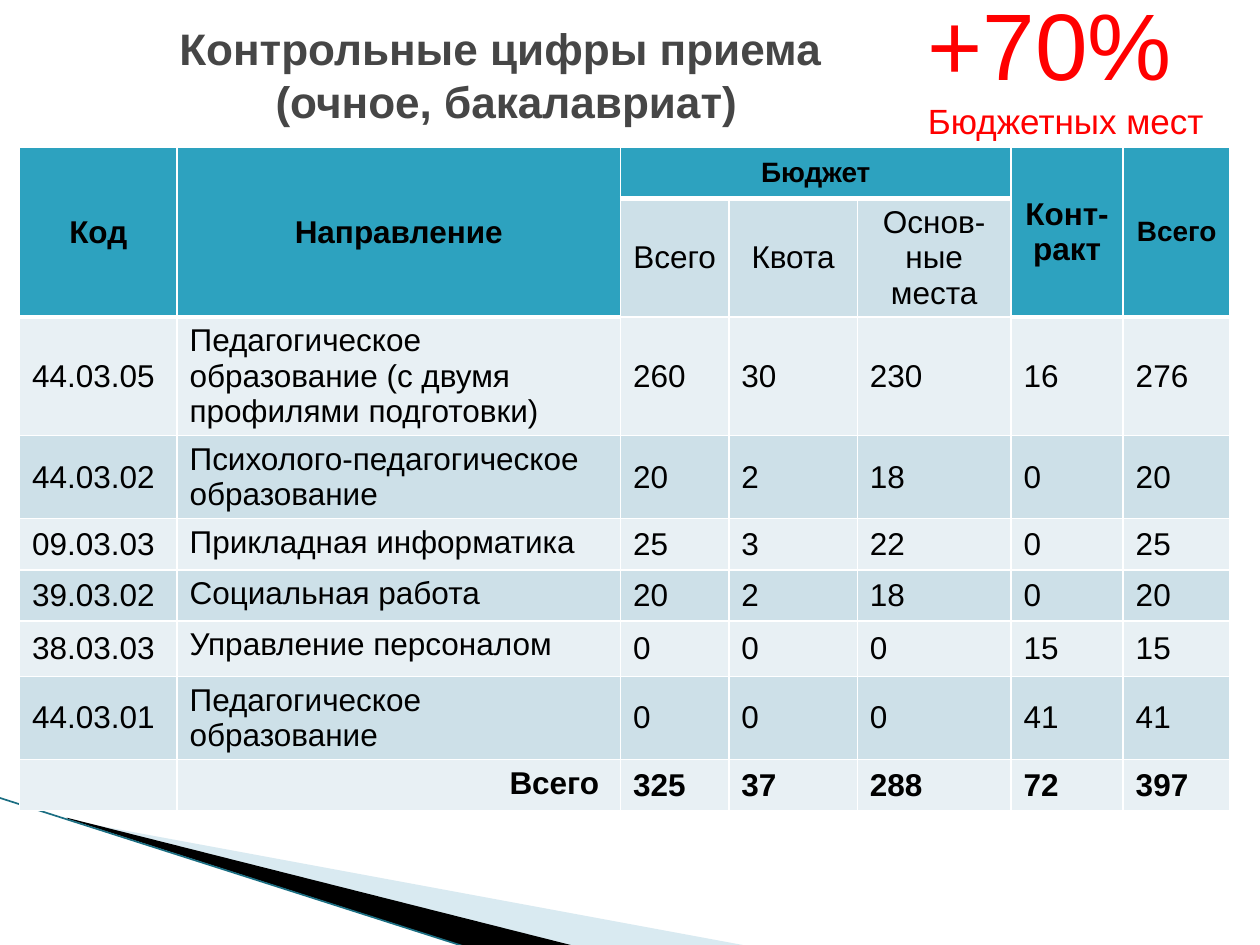
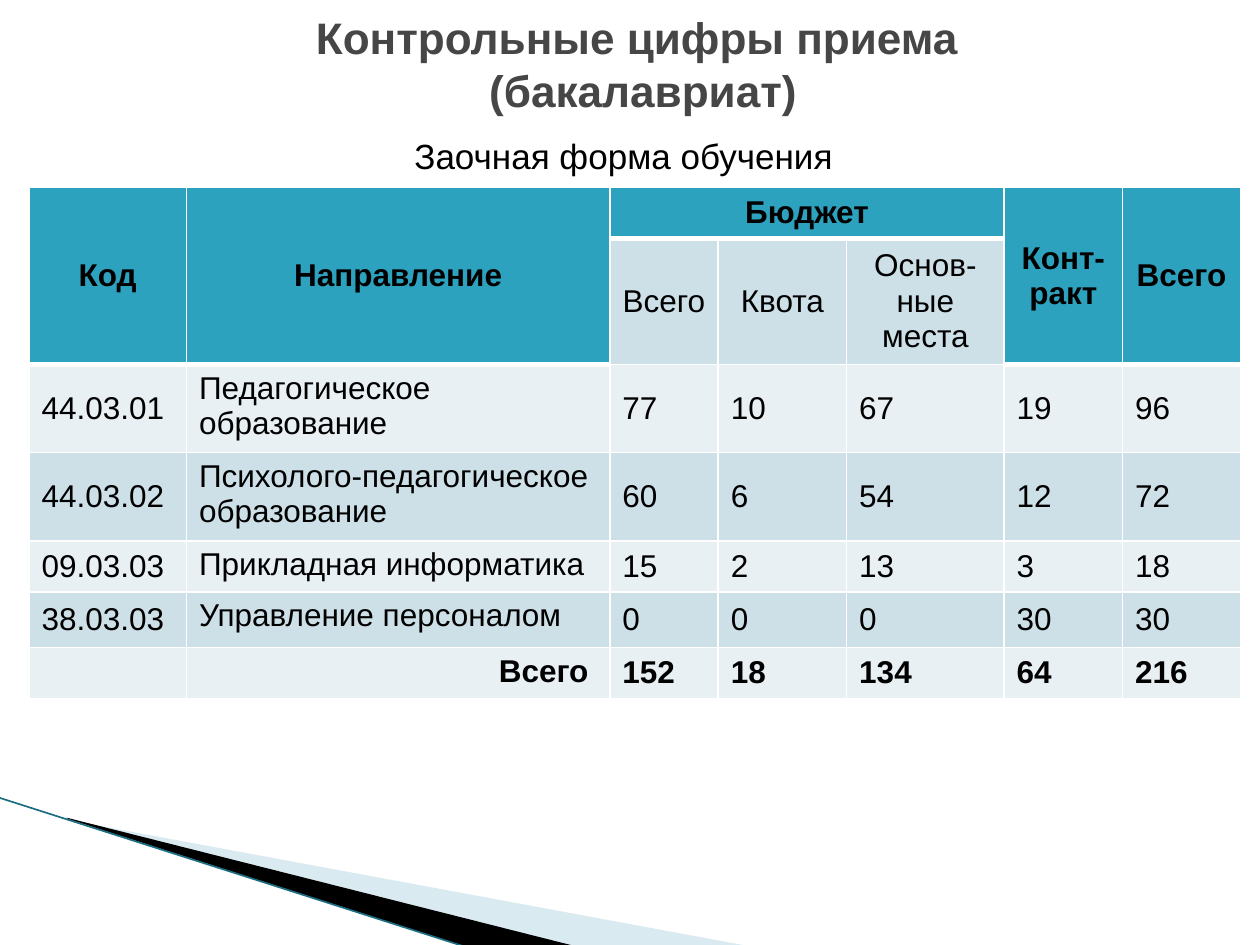
from lxml.etree import SubElement
from pptx import Presentation
from pptx.dml.color import RGBColor
from pptx.enum.shapes import MSO_CONNECTOR
from pptx.enum.text import MSO_ANCHOR as ANCHOR, MSO_AUTO_SIZE as AUTO, PP_ALIGN as ALIGN
from pptx.oxml.ns import qn
from pptx.util import Inches, Pt

COLORS = {
    "title": "464646", "text": "000000", "accent": "FF0000",
    "head": "2DA2BF", "dark_band": "CDE0E8", "light_band": "E8F0F4",
    "rule": "FFFFFF", "wedge": "A0CBDC", "wedge_edge": "000000", "swoosh": "1B6E82",
}
FONT = "Arial"
COLS, ROWS = 100, 75
CELL = Inches(10) // COLS
BUDGET = range(2, 5)
HEAD = ["Код", "Направление", "Бюджет", "", "", "Конт-ракт", "Всего"]
SUBHEAD = ["", "", "Всего", "Квота", "Основ-ные места", "", ""]
ROW, TALL_ROW = 4.06, 4.4

FULL_TIME = [
    ["44.03.05", "Педагогическое образование (с двумя профилями подготовки)", 260, 30, 230, 16, 276],
    ["44.03.02", "Психолого-педагогическое образование", 20, 2, 18, 0, 20],
    ["09.03.03", "Прикладная информатика", 25, 3, 22, 0, 25],
    ["39.03.02", "Социальная работа", 20, 2, 18, 0, 20],
    ["38.03.03", "Управление персоналом", 0, 0, 0, 15, 15],
    ["44.03.01", "Педагогическое образование", 0, 0, 0, 41, 41],
]
PART_TIME = [
    ["44.03.01", "Педагогическое образование", 77, 10, 67, 19, 96],
    ["44.03.02", "Психолого-педагогическое образование", 60, 6, 54, 12, 72],
    ["09.03.03", "Прикладная информатика", 15, 2, 13, 3, 18],
    ["38.03.03", "Управление персоналом", 0, 0, 0, 30, 30],
]


def grid(*cells):
    return [int(n * CELL) for n in cells]


def rgb(name):
    return RGBColor.from_string(COLORS[name])


def place(sp, box):
    sp.left, sp.top, sp.width, sp.height = grid(*box)


def add_run(p, text, size, color="text", bold=False):
    r = p.add_run()
    r.text = text
    r.font.name, r.font.size, r.font.bold = FONT, Pt(size), bold
    r.font.color.rgb = rgb(color)


def reframe(sp, box):
    old_left, old_top = sp.left, sp.top
    place(sp, box)
    outline = next(sp._element.iter(qn("a:pathLst")))[0]
    outline.set("w", str(sp.width))
    outline.set("h", str(sp.height))
    for pt in outline.iter(qn("a:pt")):
        pt.set("x", str(int(pt.get("x")) + old_left - sp.left))
        pt.set("y", str(int(pt.get("y")) + old_top - sp.top))


def add_wedge(slide, box, points, color, alpha=None):
    start, *rest = [grid(*pt) for pt in points]
    builder = slide.shapes.build_freeform(*start)
    builder.add_line_segments(rest, close=True)
    sp = builder.convert_to_shape()
    reframe(sp, box)
    sp.shadow.inherit = False
    sp.line.fill.background()
    sp.fill.solid()
    sp.fill.fore_color.rgb = rgb(color)
    if alpha:
        clr = sp.fill._xPr.find(".//" + qn("a:srgbClr"))
        SubElement(clr, qn("a:alpha"), val=str(alpha * 1000))


def add_corner(slide):
    add_wedge(slide, (7.8, 54.7, 41.6, 15.8),
              [(5.5, 65.1), (59.5, 75.1), (45.6, 75.1), (5.5, 65)], "wedge", 40)
    add_wedge(slide, (-0.6, 63.3, 41.6, 9.2),
              [(5.3, 64.9), (45.7, 75.1), (37.2, 75.2), (5.4, 65)], "wedge_edge")
    line = slide.shapes.add_connector(MSO_CONNECTOR.STRAIGHT, *grid(-0.1, 63.3, 37.1, 75.2))
    line.line.color.rgb = rgb("swoosh")
    line.line.width = Pt(0.95)
    SubElement(line._element.spPr, qn("a:effectLst"))


def add_slide(prs, title_lines, box):
    slide = prs.slides.add_slide(prs.slide_layouts[5])
    add_corner(slide)
    title = slide.shapes.title
    place(title, box)
    tf = title.text_frame
    tf.word_wrap, tf.auto_size, tf.vertical_anchor = True, AUTO.NONE, ANCHOR.MIDDLE
    p = tf.paragraphs[0]
    p.alignment = ALIGN.CENTER
    for i, text in enumerate(title_lines):
        if i:
            p.add_line_break()
        add_run(p, text, 25.2, "title", True)
    return slide


def add_text(slide, box, lines, color="text", align=ALIGN.LEFT):
    tf = slide.shapes.add_textbox(*grid(*box)).text_frame
    tf.word_wrap = True
    for i, (text, size) in enumerate(lines):
        p = tf.add_paragraph() if i else tf.paragraphs[0]
        p.alignment = align
        add_run(p, text, size, color)


def is_head(r, c):
    return r == 0 or (r == 1 and c not in BUDGET)


def set_borders(cell, top, bottom):
    tc_pr = cell._tc.get_or_add_tcPr()
    for side, width in (("L", 1), ("R", 1), ("T", top), ("B", bottom)):
        ln = SubElement(tc_pr, qn("a:ln" + side), w=str(Pt(width)))
        fill = SubElement(ln, qn("a:solidFill"))
        SubElement(fill, qn("a:srgbClr"), val=COLORS["rule"])


def fill_cell(cell, r, c, text, size, is_total):
    head = is_head(r, c)
    below_head = r > 0 and not head and is_head(r - 1, c)
    set_borders(cell, 3 if below_head else 1, 3 if head else 1)
    cell.fill.solid()
    cell.fill.fore_color.rgb = rgb("head" if head else "dark_band" if r % 2 else "light_band")
    is_name = r > 1 and c == 1
    cell.vertical_anchor = ANCHOR.TOP if is_name else ANCHOR.MIDDLE
    p = cell.text_frame.paragraphs[0]
    if r < 2:
        p.alignment = ALIGN.CENTER
    elif is_name and is_total:
        p.alignment = ALIGN.RIGHT
    if text != "":
        add_run(p, str(text), size, bold=head or is_total)


def add_admission_table(slide, box, widths, programmes, small_heads=()):
    totals = [sum(col) for col in list(zip(*programmes))[2:]]
    rows = [HEAD, SUBHEAD, *programmes, ["", "Всего ", *totals]]
    frame = slide.shapes.add_table(len(rows), len(HEAD), *grid(*box))
    table = frame.table
    for col, width in zip(table.columns, widths):
        col.width = grid(width)[0]
    for row, values in zip(table.rows, rows):
        row.height = grid(TALL_ROW if values[0] == "38.03.03" else ROW)[0]
    frame.height = grid(box[3])[0]
    for c in range(len(HEAD)):
        if c not in BUDGET:
            table.cell(0, c).merge(table.cell(1, c))
    table.cell(0, BUDGET[0]).merge(table.cell(0, BUDGET[-1]))
    for r, values in enumerate(rows):
        for c, text in enumerate(values):
            size = 16 if r == 0 and c in small_heads else 18
            fill_cell(table.cell(r, c), r, c, text, size, r == len(rows) - 1)


def main():
    prs = Presentation()
    prs.slide_width, prs.slide_height = COLS * CELL, ROWS * CELL

    slide = add_slide(prs, ["Контрольные цифры приема", " (очное, бакалавриат)"], (0, 3.9, 79.4, 4))
    add_admission_table(slide, (1.55, 11.7, 96.1, 52.5),
                        (12.5, 35.2, 8.6, 10.2, 12.2, 8.9, 8.5), FULL_TIME, small_heads=(2, 6))
    add_text(slide, (72.65, -1.6, 25.8, 13.5), [("+70%", 54), ("Бюджетных мест", 20)], "accent")

    slide = add_slide(prs, ["Контрольные цифры приема", " (бакалавриат)"], (5, 3, 91.1, 4))
    add_text(slide, (4.5, 10.2, 90, 4.2), [("Заочная форма обучения", 20)], align=ALIGN.CENTER)
    add_admission_table(slide, (2.3, 14.85, 96.1, 39),
                        (12.5, 33.6, 8.6, 10.2, 12.5, 9.4, 9.35), PART_TIME)

    prs.save("out.pptx")


if __name__ == "__main__":
    main()
